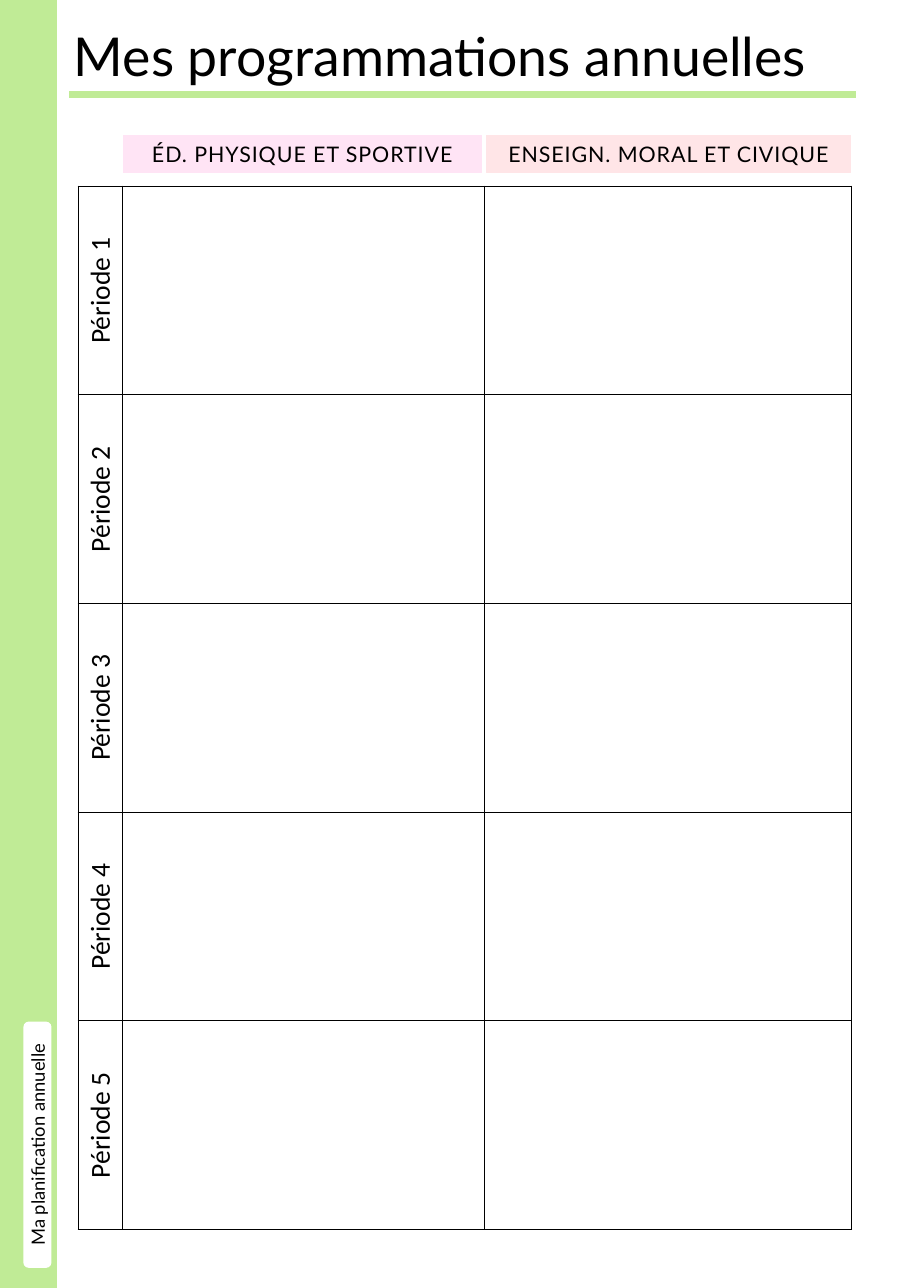
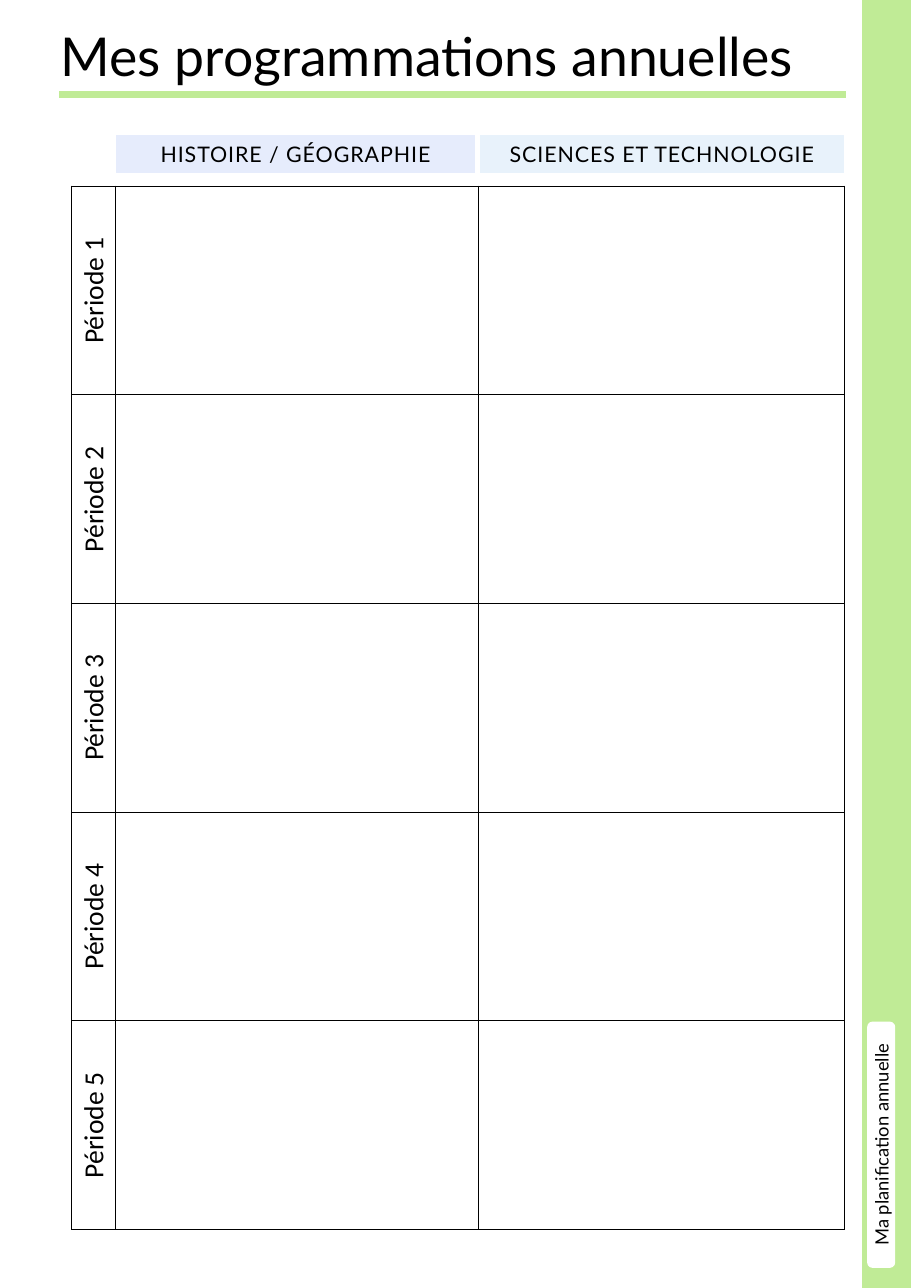
"""Builds the yearly programme pages of a teacher's planner."""
from lxml import etree
from pptx import Presentation
from pptx.dml.color import RGBColor
from pptx.enum.shapes import MSO_CONNECTOR, MSO_SHAPE
from pptx.enum.text import MSO_ANCHOR, MSO_AUTO_SIZE, PP_ALIGN
from pptx.oxml.ns import qn
from pptx.util import Inches, Pt

RECTANGLE = MSO_SHAPE.RECTANGLE
ROUNDED = MSO_SHAPE.ROUNDED_RECTANGLE
STRAIGHT = MSO_CONNECTOR.STRAIGHT
LEFT, CENTER = PP_ALIGN.LEFT, PP_ALIGN.CENTER
TOP, MIDDLE = MSO_ANCHOR.TOP, MSO_ANCHOR.MIDDLE
NO_FIT = MSO_AUTO_SIZE.NONE

GREEN = RGBColor(0xC0, 0xEB, 0x96)
WHITE = RGBColor(0xFF, 0xFF, 0xFF)
BLACK = RGBColor(0x00, 0x00, 0x00)
PINK = RGBColor(0xFF, 0xE4, 0xF5)
ROSE = RGBColor(0xFF, 0xE5, 0xE7)
LAVENDER = RGBColor(0xE6, 0xEC, 0xFC)
SKY = RGBColor(0xE8, 0xF2, 0xFB)

PAGE_WIDTH, PAGE_HEIGHT = 8.27, 11.69
TITLE = "Mes programmations annuelles"
SECTION = "Ma planification annuelle"
PERIODS = [f"Période {number}" for number in range(1, 6)]
COLUMN_WIDTHS = (0.4, 3.29, 3.33)
GRID_TOP, GRID_HEIGHT = 1.69, 9.47
HEADING_SPOTS = ((0.41, 3.25), (3.71, 3.3))

PAGES = [
    {"band": (0, 0.51), "tag": 0.22, "rule": 0.63, "title": (0.57, 7.46), "grid": 0.71,
     "subjects": [("ÉD. PHYSIQUE ET SPORTIVE", PINK), ("ENSEIGN. MORAL ET CIVIQUE", ROSE)]},
    {"band": (7.83, 0.43), "tag": 7.88, "rule": 0.54, "title": (0.45, 7.67), "grid": 0.65,
     "subjects": [("HISTOIRE / GÉOGRAPHIE", LAVENDER), ("SCIENCES ET TECHNOLOGIE", SKY)]},
]


class Planner:
    """Holds the planner's style and the page being drawn."""

    def __init__(self):
        self.deck = Presentation()
        self.deck.slide_width = Inches(PAGE_WIDTH)
        self.deck.slide_height = Inches(PAGE_HEIGHT)
        self.slide = None

    def new_page(self):
        """Starts a page with only a title."""
        self.slide = self.deck.slides.add_slide(self.deck.slide_layouts[5])

    def set_text(self, frame, text, size, font="Lato", align=CENTER, spacing=None):
        """Sets the text of a frame in the planner's style."""
        frame.text = text
        paragraph = frame.paragraphs[0]
        paragraph.alignment = align
        run = paragraph.runs[0]
        run.font.name = font
        run.font.size = Pt(size)
        run.font.color.rgb = BLACK
        if spacing:
            run._r.get_or_add_rPr().set("spc", str(round(spacing * 100)))

    def title(self, left, width):
        """Places the page title."""
        title = self.slide.shapes.title
        title.left, title.top = Inches(left), Inches(0.16)
        title.width, title.height = Inches(width), Inches(0.69)
        frame = title.text_frame
        frame.word_wrap = True
        frame.auto_size = NO_FIT
        frame.vertical_anchor = TOP
        self.set_text(frame, TITLE, 35, align=LEFT)

    def box(self, kind, left, top, width, height, color, line_width=1):
        """Draws a plain coloured shape."""
        box = self.slide.shapes.add_shape(
            kind, Inches(left), Inches(top), Inches(width), Inches(height))
        box.shadow.inherit = False
        box.fill.solid()
        box.fill.fore_color.rgb = color
        box.line.color.rgb = color
        box.line.width = Pt(line_width)
        return box

    def tag(self, left):
        """Draws the upright section tag on the band."""
        frame = self.box(ROUNDED, left, 9.28, 0.24, 2.22, WHITE).text_frame
        frame.margin_left = frame.margin_right = 0
        frame.margin_top = frame.margin_bottom = 0
        frame.vertical_anchor = MIDDLE
        frame._txBody.bodyPr.set("vert", "vert270")
        self.set_text(frame, SECTION, 12)

    def rule(self, left):
        """Underlines the title."""
        rule = self.slide.shapes.add_connector(
            STRAIGHT, Inches(left), Inches(0.86), Inches(left + 7.14), Inches(0.86))
        rule.line.color.rgb = GREEN
        rule.line.width = Pt(4.75)
        etree.SubElement(rule._element.spPr, qn("a:effectLst"))

    def heading(self, left, width, subject, color):
        """Draws a subject heading above its column."""
        frame = self.box(RECTANGLE, left, 1.23, width, 0.34, color, 0.75).text_frame
        frame.word_wrap = True
        frame.vertical_anchor = MIDDLE
        self.set_text(frame, subject, 14, spacing=0.6)

    def outline(self, cell):
        """Gives a cell thin black borders on all sides."""
        properties = cell._tc.get_or_add_tcPr()
        for index, side in enumerate(("lnL", "lnR", "lnT", "lnB")):
            border = etree.Element(qn(f"a:{side}"), w=str(Pt(0.75)))
            fill = etree.SubElement(border, qn("a:solidFill"))
            etree.SubElement(fill, qn("a:srgbClr"), val=str(BLACK))
            properties.insert(index, border)

    def grid(self, left):
        """Draws the table of periods and empty subject cells."""
        table = self.slide.shapes.add_table(
            len(PERIODS), len(COLUMN_WIDTHS), Inches(left), Inches(GRID_TOP),
            Inches(sum(COLUMN_WIDTHS)), Inches(GRID_HEIGHT)).table
        table.first_row = table.horz_banding = False
        for column, width in zip(table.columns, COLUMN_WIDTHS):
            column.width = Inches(width)
        for cell in table.iter_cells():
            cell.fill.background()
            self.outline(cell)
        for row, period in enumerate(PERIODS):
            label = table.cell(row, 0)
            label.margin_left = label.margin_right = Inches(0.04)
            label.vertical_anchor = MIDDLE
            label._tc.get_or_add_tcPr().set("vert", "vert270")
            self.set_text(label.text_frame, period, 18, font="Calibri")


def main():
    """Draws every page and saves the planner."""
    planner = Planner()
    for page in PAGES:
        planner.new_page()
        band_left, band_width = page["band"]
        planner.box(RECTANGLE, band_left, 0, band_width, PAGE_HEIGHT, GREEN)
        planner.tag(page["tag"])
        planner.rule(page["rule"])
        planner.title(*page["title"])
        planner.grid(page["grid"])
        for (offset, width), (subject, color) in zip(HEADING_SPOTS, page["subjects"]):
            planner.heading(page["grid"] + offset, width, subject, color)
    planner.deck.save("out.pptx")


if __name__ == "__main__":
    main()
